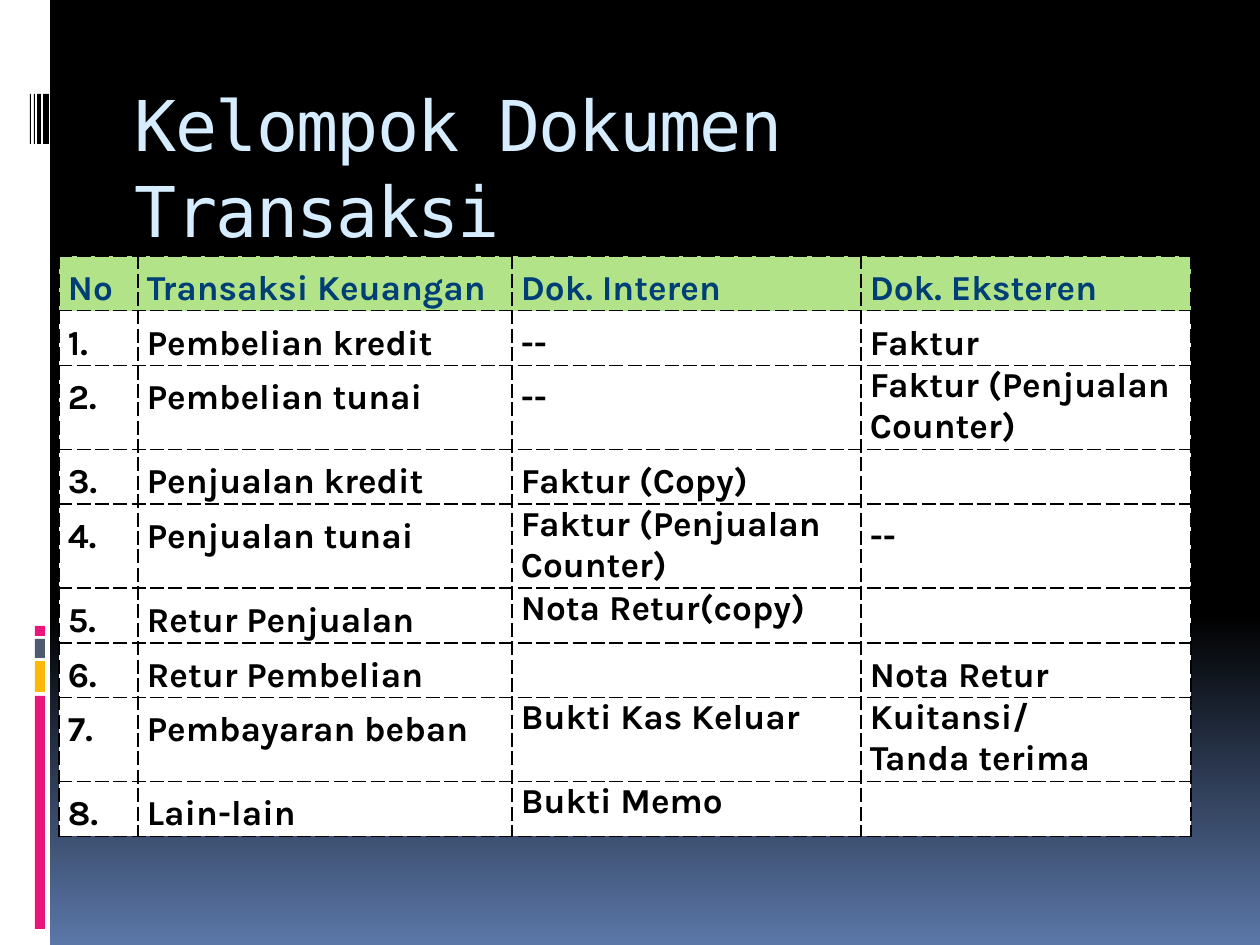
from lxml import etree
from pptx import Presentation
from pptx.dml.color import RGBColor
from pptx.enum.shapes import MSO_SHAPE
from pptx.enum.text import MSO_ANCHOR
from pptx.oxml.ns import qn
from pptx.util import Emu, Pt

RECTANGLE = MSO_SHAPE.RECTANGLE
TOP = MSO_ANCHOR.TOP

BLACK = RGBColor(0x00, 0x00, 0x00)
WHITE = RGBColor(0xFF, 0xFF, 0xFF)
BLUE = RGBColor(0x5B, 0x77, 0xA8)
PALE_BLUE = RGBColor(0xD6, 0xEC, 0xFF)
NAVY = RGBColor(0x00, 0x3F, 0x75)
GREEN = RGBColor(0xB2, 0xE3, 0x89)
PINK = RGBColor(0xEA, 0x15, 0x7A)
AMBER = RGBColor(0xFE, 0xB8, 0x0A)
SLATE = RGBColor(0x4E, 0x5B, 0x6F)

EMU_PER_PX = 914400 / 126

TITLE_FONT = {"name": "DejaVu Sans Mono", "size": Pt(40)}
TABLE_FONT = {"name": "Karla", "size": Pt(20), "bold": True}

# (top, height, colour) of the blocks at the foot of the rail
RAIL_BLOCKS = [
    (696, 233, PINK),
    (661, 31, AMBER),
    (639, 19, SLATE),
    (626, 10, PINK),
]
# (left, width) of the barcode stripes
RAIL_STRIPES = [(43, 6), (37, 4), (34, 1), (30, 1)]

COLUMN_WIDTHS = [79, 374, 349, 330]
ROW_HEIGHT, TALL_ROW_HEIGHT = 54, 83
LOOSE_SPACING = 1.3
HEADER = ["No", "Transaksi Keuangan", "Dok. Interen", "Dok. Eksteren"]
TRANSACTIONS = [
    ("Pembelian kredit", "--", "Faktur"),
    ("Pembelian tunai", "--", "Faktur (Penjualan Counter)"),
    ("Penjualan kredit", "Faktur (Copy)", ""),
    ("Penjualan tunai", "Faktur (Penjualan Counter)", "--"),
    ("Retur Penjualan", "Nota Retur(copy)", ""),
    ("Retur Pembelian", "", "Nota Retur"),
    ("Pembayaran beban", "Bukti Kas Keluar", "Kuitansi/\nTanda terima"),
    ("Lain-lain", "Bukti Memo", ""),
]
TALL_ROWS = {2, 4, 7}
TIGHT_CELLS = {(2, 3), (4, 2), (5, 2), (7, 2), (7, 3), (8, 2)}


def px(length):
    return Emu(round(length * EMU_PER_PX))


def set_attributes(target, values):
    for name, value in values.items():
        setattr(target, name, value)


def style_run(run, font_values, color):
    set_attributes(run.font, font_values)
    run.font.color.rgb = color


def paint_background(slide):
    fill = slide.background.fill
    fill.gradient()
    fill.gradient_angle = 270
    for stop, (position, color) in zip(fill.gradient_stops, [(0.65, BLACK), (1, BLUE)]):
        stop.position = position
        stop.color.rgb = color


def add_block(slide, left, top, width, height, color):
    block = slide.shapes.add_shape(RECTANGLE, px(left), px(top), px(width), px(height))
    block.shadow.inherit = False
    block.fill.solid()
    block.fill.fore_color.rgb = color
    block.line.fill.background()


def add_rail(slide, left, top, width, height):
    """White strip with a barcode above and coloured blocks below."""
    add_block(slide, left, top, width, height, WHITE)
    for block_top, block_height, color in RAIL_BLOCKS:
        add_block(slide, left + 35, top + block_top, 10, block_height, color)
    for stripe_left, stripe_width in RAIL_STRIPES:
        add_block(slide, left + stripe_left, top + 94, stripe_width, 50, BLACK)


def add_title(slide, left, top, width, height, text):
    box = slide.shapes.add_textbox(px(left), px(top), px(width), px(height))
    frame = box.text_frame
    set_attributes(frame, {
        "word_wrap": True,
        "vertical_anchor": TOP,
        "margin_left": px(9),
        "margin_right": px(30),
        "margin_top": px(8),
        "margin_bottom": 0,
    })
    paragraph = frame.paragraphs[0]
    paragraph.line_spacing = 1.03
    run = paragraph.add_run()
    run.text = text
    style_run(run, TITLE_FONT, PALE_BLUE)
    run._r.get_or_add_rPr().set("spc", "-100")


def add_dashed_borders(cell):
    properties = cell._tc.get_or_add_tcPr()
    for side in ("lnL", "lnR", "lnT", "lnB"):
        line = etree.SubElement(properties, qn(f"a:{side}"), w=str(Pt(1)))
        fill = etree.SubElement(line, qn("a:solidFill"))
        etree.SubElement(fill, qn("a:srgbClr"), val=str(BLACK))
        etree.SubElement(line, qn("a:prstDash"), val="dash")


def fill_cell(cell, text, text_color, fill_color, line_spacing):
    add_dashed_borders(cell)
    cell.fill.solid()
    cell.fill.fore_color.rgb = fill_color
    set_attributes(cell, {
        "margin_left": px(9),
        "margin_right": px(9),
        "margin_top": 0,
        "margin_bottom": 0,
        "vertical_anchor": TOP,
    })
    cell.text = text
    for paragraph in cell.text_frame.paragraphs:
        paragraph.line_spacing = line_spacing
        for run in paragraph.runs:
            style_run(run, TABLE_FONT, text_color)


def add_document_table(slide, left, top):
    rows = [HEADER]
    rows += [(f"{number}.", *entry) for number, entry in enumerate(TRANSACTIONS, 1)]
    heights = [
        TALL_ROW_HEIGHT if index in TALL_ROWS else ROW_HEIGHT
        for index in range(len(rows))
    ]
    table = slide.shapes.add_table(
        len(rows), len(HEADER), px(left), px(top),
        px(sum(COLUMN_WIDTHS)), px(sum(heights)),
    ).table
    set_attributes(table, {"first_row": False, "horz_banding": False})
    for column, width in zip(table.columns, COLUMN_WIDTHS):
        column.width = px(width)
    for row_index, texts in enumerate(rows):
        table.rows[row_index].height = px(heights[row_index])
        text_color, fill_color = (BLACK, WHITE) if row_index else (NAVY, GREEN)
        for column_index, text in enumerate(texts):
            position = (row_index, column_index)
            spacing = 1.0 if position in TIGHT_CELLS else LOOSE_SPACING
            fill_cell(table.cell(*position), text, text_color, fill_color, spacing)


def main():
    presentation = Presentation()
    presentation.slide_width = px(1260)
    presentation.slide_height = px(945)
    slide = presentation.slides.add_slide(presentation.slide_layouts[6])
    paint_background(slide)
    add_rail(slide, 0, 0, 50, 945)
    add_title(slide, 126, 71, 1071, 126, "Kelompok Dokumen Transaksi")
    add_document_table(slide, 59, 256)
    presentation.save("out.pptx")


if __name__ == "__main__":
    main()
